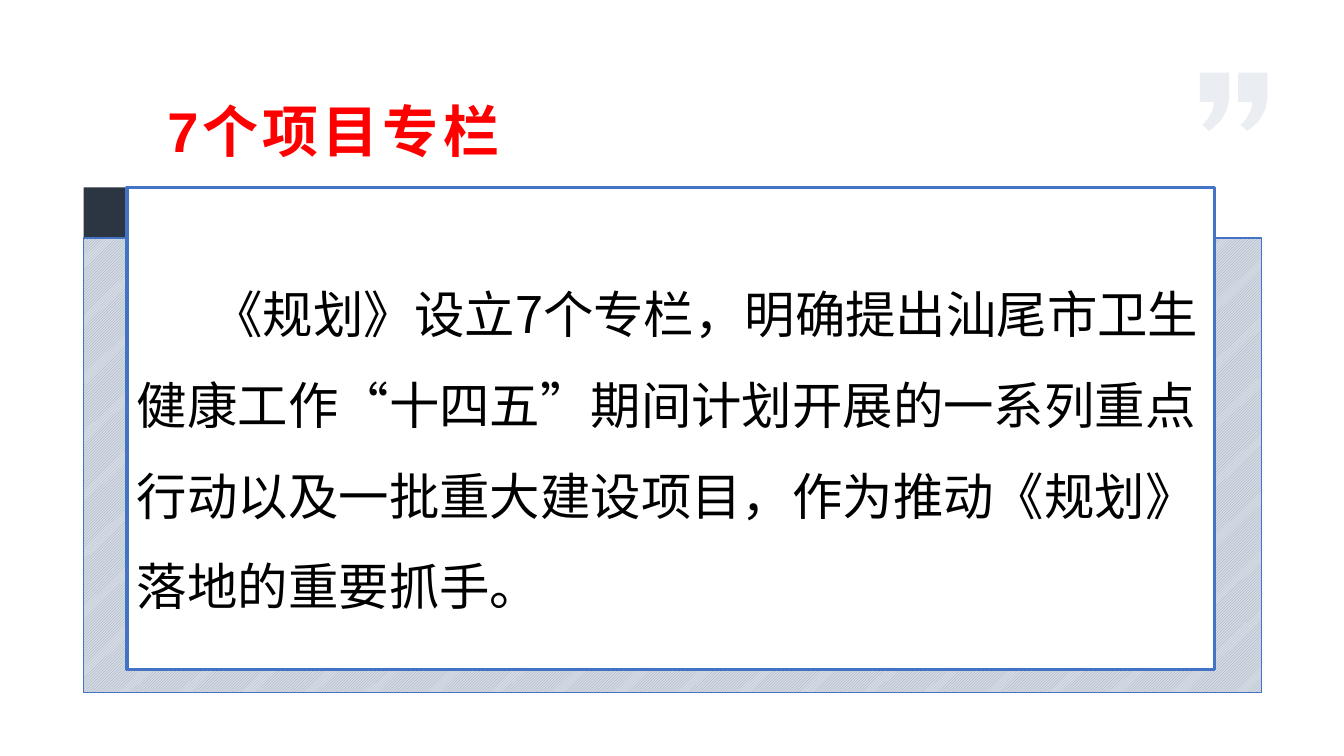
import dataclasses
import typing

import lxml.etree
import pptx
import pptx.dml.color
import pptx.enum.dml
import pptx.enum.shapes
import pptx.enum.text
import pptx.oxml.ns
import pptx.util

PX = 9144  # EMU per px, 100 px to the inch
COLORS = {
    "accent": "4472C4",
    "tab": "2C3643",
    "stripe": "93A3B8",
    "pale": "D6DCE4",
    "card": "FFFFFF",
    "heading": "FF0000",
    "body": "000000",
}
CJK_FONT = "Noto Sans CJK SC"
HEADING = "7个项目专栏"
BODY = ("《规划》设立7个专栏，明确提出汕尾市卫生健康工作“十四五”期间计划开展的"
        "一系列重点行动以及一批重大建设项目，作为推动《规划》落地的重要抓手。")
Point = tuple[float, float]


@dataclasses.dataclass(frozen=True)
class Panel:
    left: int
    top: int
    width: int
    height: int
    fill: str
    line: typing.Optional[str] = None
    line_pt: float = 0
    stripe: typing.Optional[str] = None


@dataclasses.dataclass(frozen=True)
class TextStyle:
    size: int
    color: str
    latin: str
    indent: int
    bold: bool = False
    spacing_pt: int = 0


TAB = Panel(83, 186, 44, 51, "tab")
BACKDROP = Panel(83, 236, 1168, 451, "pale", "accent", 1, "stripe")
CARD = Panel(126, 186, 1079, 478, "card", "accent", 2.25)
HEADING_STYLE = TextStyle(40, "heading", "Arial", 78, bold=True, spacing_pt=3)
BODY_STYLE = TextStyle(36, "body", CJK_FONT, 75)

QUOTE_LEFTS, QUOTE_TOP = (1190, 1228), 72


def px(length: float) -> int:
    return round(length * PX)


def rgb(name: str) -> pptx.dml.color.RGBColor:
    return pptx.dml.color.RGBColor.from_string(COLORS[name])


def add_panel(shapes, panel: Panel):
    shape = shapes.add_shape(
        pptx.enum.shapes.MSO_SHAPE.RECTANGLE,
        px(panel.left), px(panel.top), px(panel.width), px(panel.height))
    shape.shadow.inherit = False
    if panel.stripe:
        shape.fill.patterned()
        shape.fill.pattern = pptx.enum.dml.MSO_PATTERN.LIGHT_UPWARD_DIAGONAL
        shape.fill.fore_color.rgb = rgb(panel.stripe)
        shape.fill.back_color.rgb = rgb(panel.fill)
    else:
        shape.fill.solid()
        shape.fill.fore_color.rgb = rgb(panel.fill)
    if panel.line:
        shape.line.color.rgb = rgb(panel.line)
        shape.line.width = pptx.util.Pt(panel.line_pt)
    else:
        shape.line.fill.background()
    return shape


def write_text(frame, text: str, style: TextStyle):
    frame.word_wrap = True
    frame.auto_size = pptx.enum.text.MSO_AUTO_SIZE.NONE
    frame.vertical_anchor = pptx.enum.text.MSO_ANCHOR.MIDDLE
    frame.text = text
    paragraph = frame.paragraphs[0]
    paragraph.alignment = pptx.enum.text.PP_ALIGN.LEFT
    font = paragraph.font
    font.size = pptx.util.Pt(style.size)
    font.bold = style.bold
    font.color.rgb = rgb(style.color)
    font.name = style.latin
    # First-line indent, East Asian font and letter spacing
    properties = paragraph._p.get_or_add_pPr()
    properties.set("marL", "0")
    properties.set("indent", str(px(style.indent)))
    defaults = properties.find(pptx.oxml.ns.qn("a:defRPr"))
    defaults.set("spc", str(style.spacing_pt * 100))
    lxml.etree.SubElement(
        defaults, pptx.oxml.ns.qn("a:ea")).set("typeface", CJK_FONT)
    return paragraph


def curve(*controls: Point, steps: int = 12) -> list[Point]:
    """Points on a cubic curve, without its start."""
    def at(t: float, axis: int) -> float:
        a, b, c, d = (control[axis] for control in controls)
        u = 1 - t
        return a * u**3 + 3 * b * u * u * t + 3 * c * u * t * t + d * t**3

    return [(at(i / steps, 0), at(i / steps, 1)) for i in range(1, steps + 1)]


def add_quote_mark(shapes, left: int, top: int) -> None:
    outline = [(0, 0), (29, 0), (29, 26),
               *curve((29, 26), (28, 47), (9, 58), (9, 58)),
               (8, 57), (3, 52), (2, 52),
               *curve((2, 52), (2, 52), (13, 44), (14, 29)),
               (0, 29)]
    points = [(left + x, top + y) for x, y in outline]
    builder = shapes.build_freeform(*points[0], scale=PX)
    builder.add_line_segments(points[1:], close=True)
    mark = builder.convert_to_shape()
    mark.shadow.inherit = False
    mark.line.fill.background()
    mark.fill.solid()
    mark.fill.fore_color.rgb = rgb("pale")
    color = mark._element.spPr.find(
        f"{pptx.oxml.ns.qn('a:solidFill')}/{pptx.oxml.ns.qn('a:srgbClr')}")
    lxml.etree.SubElement(
        color, pptx.oxml.ns.qn("a:alpha")).set("val", "50000")


def main() -> None:
    deck = pptx.Presentation()
    deck.slide_width, deck.slide_height = px(1333), px(750)
    slide = deck.slides.add_slide(deck.slide_layouts.get_by_name("Title Only"))

    # Heading
    heading = slide.shapes.title
    heading.left, heading.top = px(77), px(95)
    heading.width, heading.height = px(776), px(69)
    write_text(heading.text_frame, HEADING, HEADING_STYLE)
    heading.text_frame.margin_left = px(11)
    heading.text_frame.margin_right = px(7)
    heading.text_frame.margin_top = heading.text_frame.margin_bottom = px(4)

    # Layered panels, the front one holding the body text
    add_panel(slide.shapes, TAB)
    add_panel(slide.shapes, BACKDROP)
    card = add_panel(slide.shapes, CARD)
    body = write_text(card.text_frame, BODY, BODY_STYLE)
    body.line_spacing = 1.5
    card.text_frame.margin_top = px(17)

    # Closing quotation mark
    quote = slide.shapes.add_group_shape()
    for left in QUOTE_LEFTS:
        add_quote_mark(quote.shapes, left, QUOTE_TOP)

    deck.save("out.pptx")


if __name__ == "__main__":
    main()
